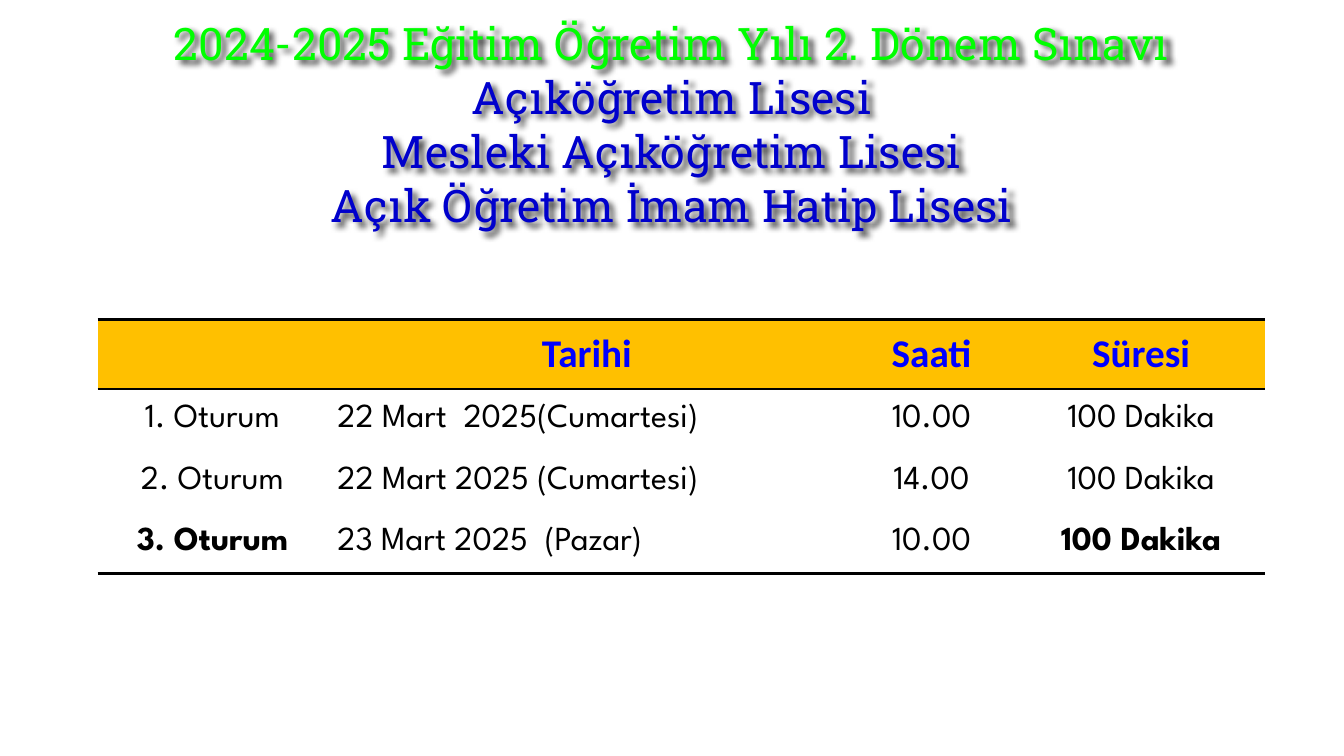
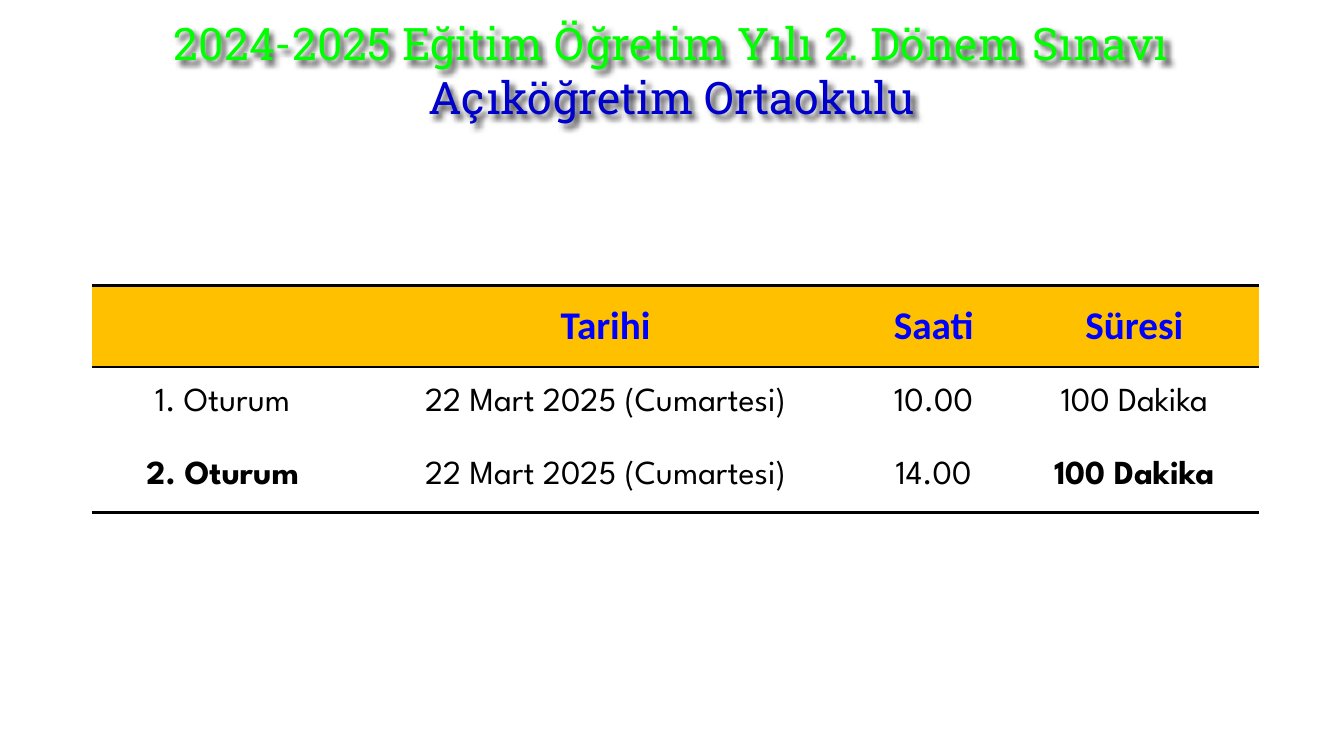
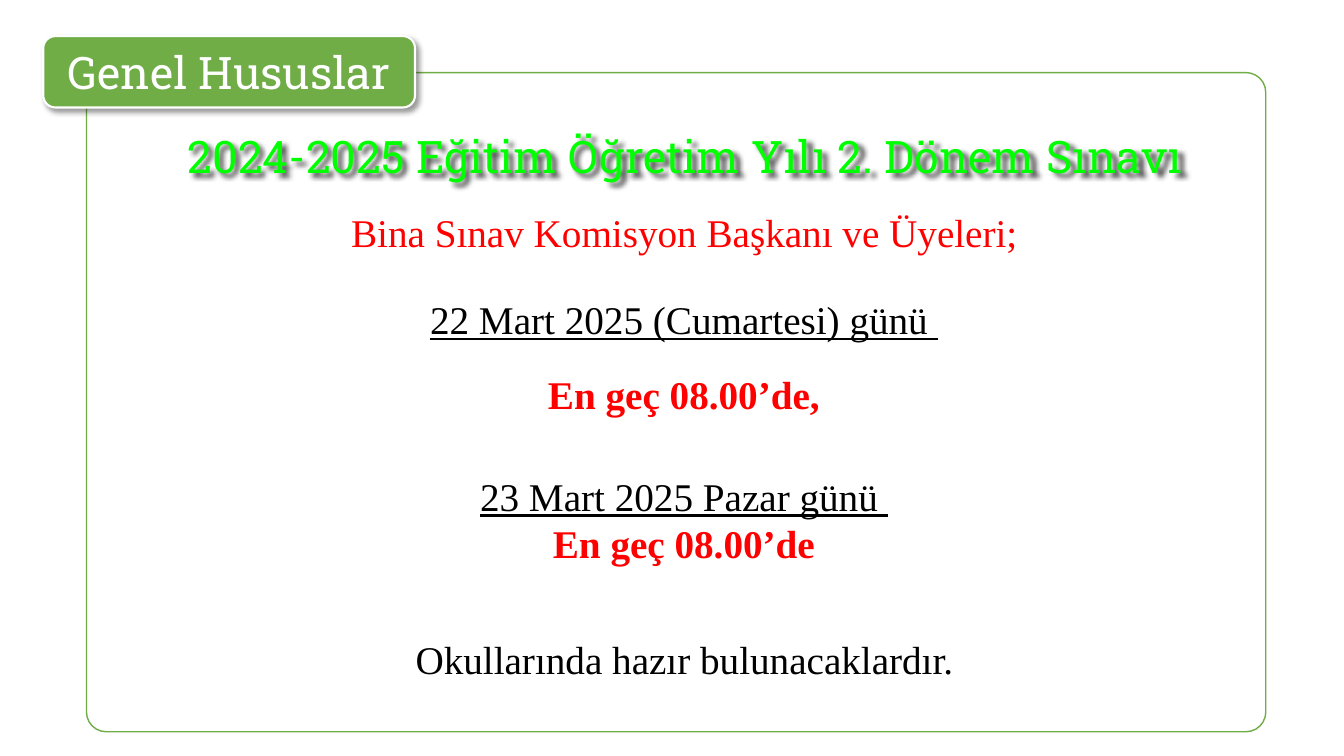
from dataclasses import dataclass, field
from typing import Any

from lxml import etree
from pptx import Presentation
from pptx import util as u
from pptx.dml.color import RGBColor
from pptx.enum import shapes, text
from pptx.oxml import ns


@dataclass(frozen=True)
class Theme:
    white: str = "FFFFFF"
    black: str = "000000"
    lime: str = "00FF00"
    navy: str = "0000CC"
    blue: str = "0000FF"
    amber: str = "FFC000"
    green: str = "70AD47"
    red: str = "FF0000"
    title_font: str = "Roboto Slab"
    header_font: str = "Calibri"
    cell_font: str = "League Spartan"
    body_font: str = "Times New Roman"
    title_size: int = 32
    body_size: int = 28
    cell_size: int = 24
    rule_width: int = 2


THEME = Theme()
EXAM = "2024-2025 Eğitim Öğretim Yılı 2. Dönem Sınavı"
HEADINGS = ("", "Tarihi", "Saati", "Süresi")
CENTER = text.PP_ALIGN.CENTER
LEFT = text.PP_ALIGN.LEFT


@dataclass(frozen=True)
class Area:
    left: float
    top: float
    width: float
    height: float

    def lengths(self) -> tuple[u.Cm, ...]:
        return tuple(u.Cm(v) for v in (self.left, self.top, self.width, self.height))


@dataclass(frozen=True)
class Line:
    words: str
    color: str
    font: dict[str, Any]
    layout: dict[str, Any] = field(default_factory=dict)


@dataclass(frozen=True)
class Schedule:
    schools: tuple[str, ...]
    title_height: float
    left: float
    top: float
    columns: tuple[float, ...]
    header_height: float
    row_height: float
    date_align: Any
    sessions: tuple[tuple[str, ...], ...]


TITLE_FONT = {"name": THEME.title_font, "size": u.Pt(THEME.title_size), "bold": False}
BODY_FONT = {"name": THEME.body_font, "size": u.Pt(THEME.body_size)}
HEADER_FONT = {"name": THEME.header_font, "size": u.Pt(THEME.body_size), "bold": True}
CELL_FONT = {"name": THEME.cell_font, "size": u.Pt(THEME.cell_size)}
LOOSE = {"line_spacing": 1.5}

SCHEDULES = (
    Schedule(
        ("Açıköğretim Lisesi", "Mesleki Açıköğretim Lisesi", "Açık Öğretim İmam Hatip Lisesi"),
        5.74, 2.46, 8.05, (5.79, 13.08, 4.29, 6.27), 1.75, 1.55, LEFT,
        (
            ("1. Oturum", "22 Mart  2025(Cumartesi)", "10.00", "100 Dakika"),
            ("2. Oturum", "22 Mart 2025 (Cumartesi)", "14.00", "100 Dakika"),
            ("3. Oturum", "23 Mart 2025  (Pazar)", "10.00", "100 Dakika"),
        ),
    ),
    Schedule(
        ("Açıköğretim Ortaokulu",),
        3, 2.31, 7.19, (6.6, 12.7, 3.84, 6.27), 2.06, 1.83, CENTER,
        (
            ("1. Oturum", "22 Mart 2025 (Cumartesi)", "10.00", "100 Dakika"),
            ("2. Oturum", "22 Mart 2025 (Cumartesi)", "14.00", "100 Dakika"),
        ),
    ),
)

NOTICES = (
    (Area(2.59, 4.52, 29.31, 1.83), (
        Line("Bina Sınav Komisyon Başkanı ve Üyeleri;", THEME.red, BODY_FONT, LOOSE),
    )),
    (Area(3.25, 6.73, 27.97, 8.89), (
        Line("22 Mart 2025 (Cumartesi) günü ", THEME.black, BODY_FONT | {"underline": True}, LOOSE),
        Line("En geç 08.00’de,", THEME.red, BODY_FONT | {"bold": True}, {"space_before": u.Pt(20)}),
        Line("23 Mart 2025 Pazar günü ", THEME.black, BODY_FONT | {"underline": True},
             LOOSE | {"space_before": u.Pt(22)}),
        Line("En geç 08.00’de", THEME.red, BODY_FONT | {"bold": True}),
    )),
    (Area(2.39, 15.29, 29.72, 1.83), (
        Line("Okullarında hazır bulunacaklardır.", THEME.black, BODY_FONT, LOOSE),
    )),
)


def apply(target: Any, values: dict[str, Any]) -> None:
    for name, value in values.items():
        setattr(target, name, value)


def write(frame: Any, lines: tuple[Line, ...]) -> None:
    for index, line in enumerate(lines):
        para = frame.add_paragraph() if index else frame.paragraphs[0]
        apply(para, {"alignment": CENTER} | line.layout)
        span = para.add_run()
        span.text = line.words
        apply(span.font, line.font)
        span.font.color.rgb = RGBColor.from_string(line.color)


def add_shadow(shape: Any, opacity: int) -> None:
    shape.shadow.inherit = False
    effects = shape.element.spPr.find(ns.qn("a:effectLst"))
    shadow = etree.SubElement(effects, ns.qn("a:outerShdw"), {
        "blurRad": str(u.Pt(4)), "dist": str(u.Pt(3)), "dir": str(45 * 60000),
        "algn": "tl", "rotWithShape": "0",
    })
    color = etree.SubElement(shadow, ns.qn("a:srgbClr"), val=THEME.black)
    etree.SubElement(color, ns.qn("a:alpha"), val=str(opacity * 1000))


def place(shape: Any, area: Area) -> None:
    apply(shape, dict(zip(("left", "top", "width", "height"), area.lengths())))


def set_title(page: Any, area: Area, schools: tuple[str, ...] = ()) -> None:
    title = page.shapes.title
    place(title, area)
    title.element.getparent().append(title.element)
    apply(title.text_frame, {
        "word_wrap": True,
        "auto_size": text.MSO_AUTO_SIZE.NONE,
        "vertical_anchor": text.MSO_ANCHOR.TOP,
    })
    names = tuple(Line(school, THEME.navy, TITLE_FONT) for school in schools)
    write(title.text_frame, (Line(EXAM, THEME.lime, TITLE_FONT), *names))
    add_shadow(title, 75)


def add_text(page: Any, area: Area, lines: tuple[Line, ...]) -> None:
    box = page.shapes.add_textbox(*area.lengths())
    box.text_frame.word_wrap = True
    write(box.text_frame, lines)


def add_panel(page: Any, area: Area, radius: float, fill: str, outline: str, width: float) -> Any:
    panel = page.shapes.add_shape(shapes.MSO_SHAPE.ROUNDED_RECTANGLE, *area.lengths())
    panel.adjustments[0] = radius
    panel.shadow.inherit = False
    panel.fill.solid()
    panel.fill.fore_color.rgb = RGBColor.from_string(fill)
    panel.line.color.rgb = RGBColor.from_string(outline)
    panel.line.width = u.Pt(width)
    return panel


def set_borders(cell: Any, ruled: set[str]) -> None:
    properties = cell._tc.get_or_add_tcPr()
    for index, edge in enumerate(("lnL", "lnR", "lnT", "lnB")):
        border = etree.Element(ns.qn(f"a:{edge}"), w=str(u.Pt(THEME.rule_width)))
        if edge in ruled:
            fill = etree.SubElement(border, ns.qn("a:solidFill"))
            etree.SubElement(fill, ns.qn("a:srgbClr"), val=THEME.black)
        else:
            etree.SubElement(border, ns.qn("a:noFill"))
        properties.insert(index, border)


def add_schedule_table(page: Any, schedule: Schedule) -> None:
    rows = (HEADINGS, *schedule.sessions)
    last = len(rows) - 1
    heights = (schedule.header_height, *[schedule.row_height] * last)
    area = Area(schedule.left, schedule.top, sum(schedule.columns), sum(heights))
    table = page.shapes.add_table(len(rows), len(HEADINGS), *area.lengths()).table
    apply(table, {"first_row": False, "horz_banding": False})
    for column, width in zip(table.columns, schedule.columns):
        column.width = u.Cm(width)
    for r, (row, height) in enumerate(zip(table.rows, heights)):
        row.height = u.Cm(height)
        header = r == 0
        ruled = {"lnT"} if r <= 1 else set()
        if r in (0, last):
            ruled = ruled | {"lnB"}
        for c, (cell, words) in enumerate(zip(row.cells, rows[r])):
            cell.vertical_anchor = text.MSO_ANCHOR.MIDDLE
            cell.fill.solid()
            cell.fill.fore_color.rgb = RGBColor.from_string(THEME.amber if header else THEME.white)
            set_borders(cell, ruled)
            if not words:
                continue
            font = HEADER_FONT if header else CELL_FONT | {"bold": r == last and c in (0, 3)}
            align = schedule.date_align if c == 1 and not header else CENTER
            color = THEME.blue if header else THEME.black
            write(cell.text_frame, (Line(words, color, font, {"alignment": align}),))


def add_schedule_page(deck: Any, schedule: Schedule) -> None:
    page = deck.slides.add_slide(deck.slide_layouts[5])
    set_title(page, Area(0, 0.28, 33.87, schedule.title_height), schedule.schools)
    add_schedule_table(page, schedule)


def add_notice_page(deck: Any) -> None:
    page = deck.slides.add_slide(deck.slide_layouts[5])
    add_panel(page, Area(2.18, 1.83, 29.72, 16.61), 0.03, THEME.white, THEME.green, 1)
    set_title(page, Area(3.25, 3.12, 28.07, 1.63))
    for area, lines in NOTICES:
        add_text(page, area, lines)
    badge = add_panel(page, Area(1.09, 0.91, 9.37, 1.8), 0.17, THEME.green, THEME.white, 1.5)
    add_shadow(badge, 40)
    badge.text_frame.vertical_anchor = text.MSO_ANCHOR.MIDDLE
    write(badge.text_frame, (Line("Genel Hususlar", THEME.white, TITLE_FONT),))


def main() -> None:
    deck = Presentation()
    apply(deck, {"slide_width": u.Cm(33.87), "slide_height": u.Cm(19.05)})
    for schedule in SCHEDULES:
        add_schedule_page(deck, schedule)
    add_notice_page(deck)
    deck.save("out.pptx")


if __name__ == "__main__":
    main()
